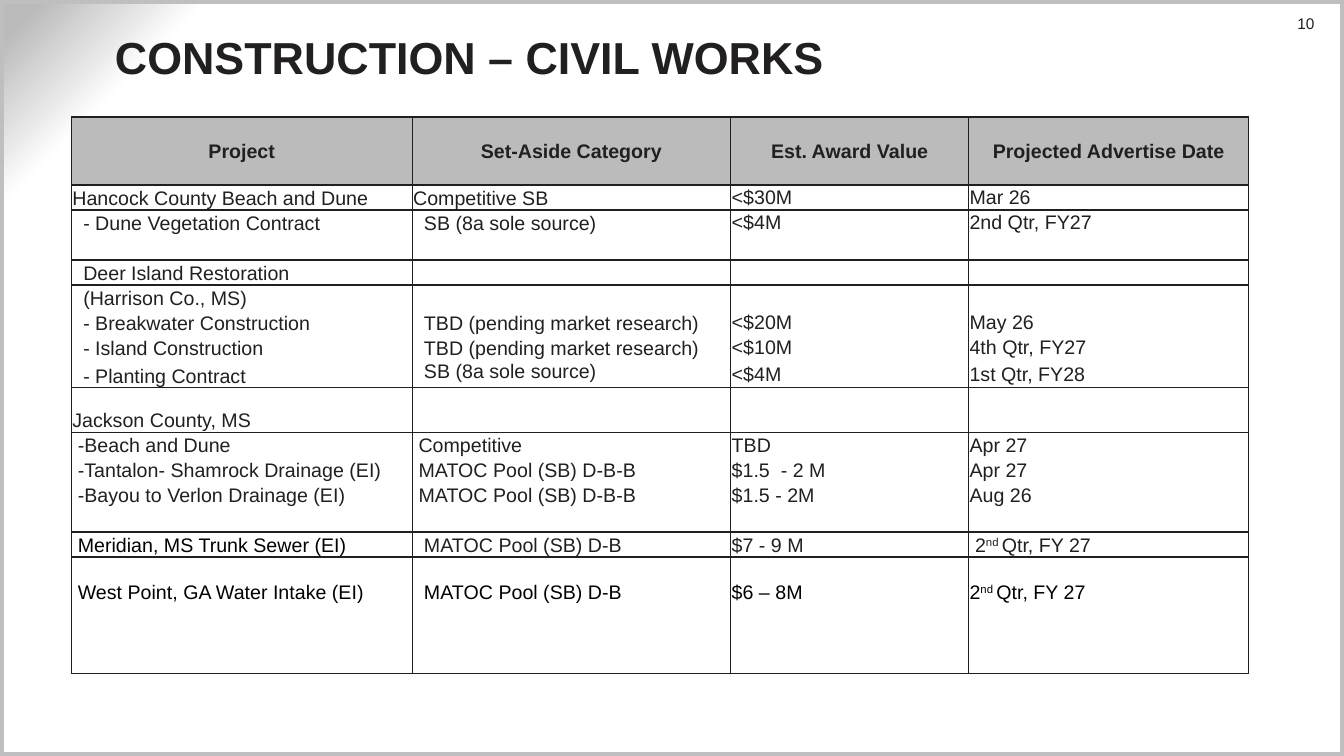
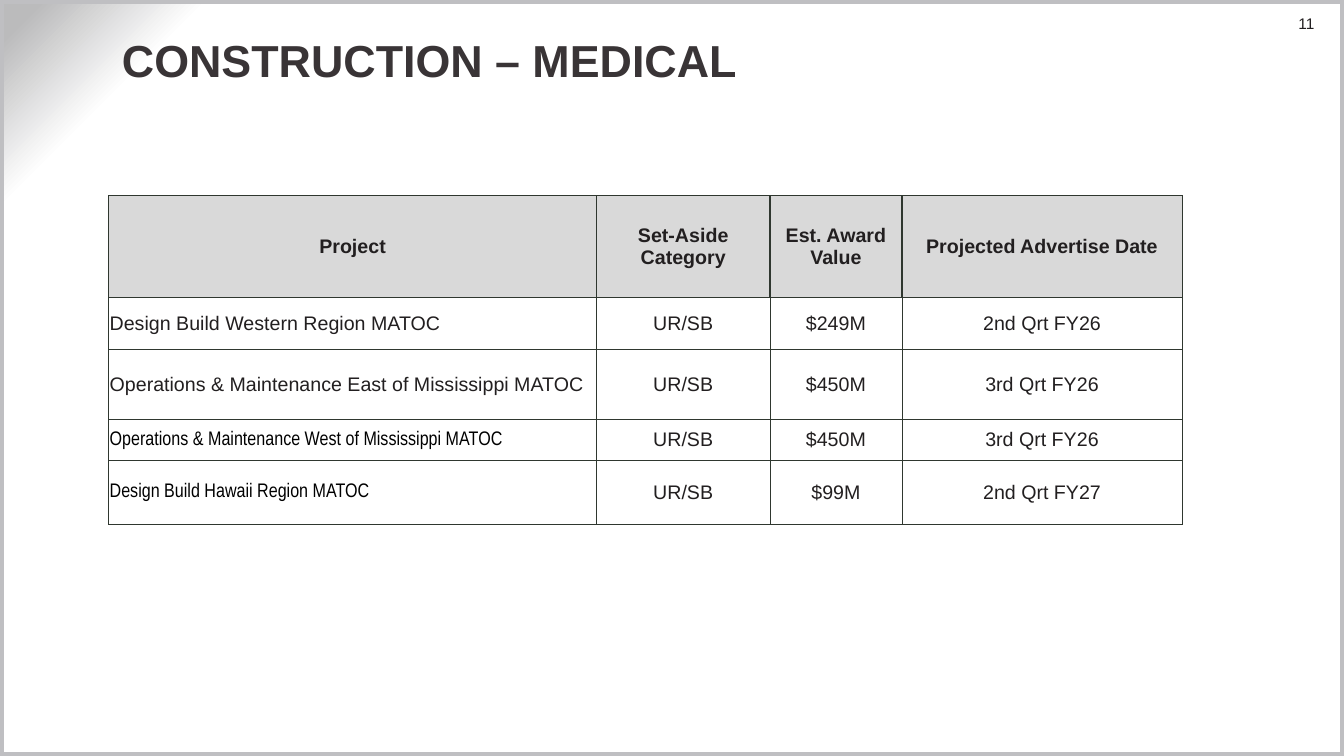
"""Build two construction forecast slides with tables of planned contracts."""
from dataclasses import dataclass, field

from lxml import etree
from pptx import Presentation
from pptx.dml.color import RGBColor
from pptx.enum import shapes, text
from pptx.oxml import ns
from pptx.util import Pt


@dataclass(frozen=True)
class Theme:
    ink: str = "221F20"
    black: str = "000000"
    white: str = "FFFFFF"
    frame: str = "BFBFC2"
    corner: str = "BBBBBC"
    font: str = "Arial"
    narrow_font: str = "Arial Narrow"
    title_size: float = 32
    table_size: float = 14
    number_size: float = 11
    width: float = 960
    height: float = 540
    frame_width: float = 6
    cell_inset: float = 0.72
    indent_step: float = 3.89
    row_height: float = 17.85


THEME = Theme()
NO_STYLE = "{2D5ABB26-0587-4C30-8999-92F81FD0307C}"
HEADINGS = ("Project", "Set-Aside Category", "Est. Award Value", "Projected Advertise Date")
ANCHORS = {
    "t": text.MSO_ANCHOR.TOP,
    "m": text.MSO_ANCHOR.MIDDLE,
    "b": text.MSO_ANCHOR.BOTTOM,
}


@dataclass(frozen=True)
class Row:
    texts: tuple[str, ...] = ("", "", "", "")
    height: float = THEME.row_height
    indents: tuple[int, ...] = (0, 0, 0, 0)
    anchors: str = "bbbb"
    black_columns: tuple[int, ...] = ()
    first_font: str = THEME.font
    centered: tuple[int, ...] = ()
    bold: bool = False


@dataclass(frozen=True)
class Forecast:
    number: str
    title: str
    title_left: float
    title_top: float
    title_color: str
    left: float
    top: float
    columns: tuple[float, ...]
    header_height: float
    header_fill: str
    line_color: str
    body_line: float
    groups: tuple[tuple[Row, ...], ...] = field(default_factory=tuple)


def medical_row(texts: tuple[str, ...], height: float, narrow: bool = False) -> Row:
    """Return a row with centred values after the project name."""
    return Row(texts, height, anchors="mmmm", centered=(1, 2, 3),
               black_columns=(0,) if narrow else (),
               first_font=THEME.narrow_font if narrow else THEME.font)


CIVIL_GROUPS = (
    (
        Row(("Hancock County Beach and Dune", "Competitive SB", "<$30M", "Mar 26"),
            anchors="bbmm"),
        Row(("- Dune Vegetation Contract", "SB (8a sole source)", "<$4M", "2nd Qtr, FY27"),
            indents=(2, 2, 0, 0), anchors="bbmm"),
        Row(),
    ),
    (
        Row(("Deer Island Restoration", "", "", ""), indents=(2, 0, 0, 0)),
        Row(("(Harrison Co., MS)", "", "", ""), indents=(2, 0, 0, 0)),
        Row(("- Breakwater Construction", "TBD (pending market research)", "<$20M", "May 26"),
            indents=(2, 2, 0, 0), anchors="bbmm"),
        Row(("- Island Construction", "TBD (pending market research)", "<$10M",
             "4th Qtr, FY27"), indents=(2, 2, 0, 0), anchors="bbmm"),
        Row(("- Planting Contract", "SB (8a sole source)", "<$4M", "1st Qtr, FY28"),
            20, (2, 2, 0, 0), "btmm"),
    ),
    (
        Row(("Jackson County, MS", "", "", ""), 31.7),
        Row(("-Beach and Dune", "Competitive", "TBD", "Apr 27"), indents=(1, 1, 0, 0)),
        Row(("-Tantalon- Shamrock Drainage (EI)", "MATOC Pool (SB) D-B-B", "$1.5  - 2 M",
             "Apr 27"), indents=(1, 1, 0, 0)),
        Row(("-Bayou to Verlon Drainage (EI)", "MATOC Pool (SB) D-B-B", "$1.5 - 2M",
             "Aug 26"), indents=(1, 1, 0, 0)),
        Row(),
    ),
    (
        Row(("Meridian, MS Trunk Sewer (EI)", "MATOC Pool (SB) D-B", "$7 - 9 M",
             "2^nd ^Qtr, FY 27"), indents=(1, 2, 0, 1), black_columns=(0,)),
        Row(("West Point, GA Water Intake (EI)", "MATOC Pool (SB) D-B", "$6 – 8M",
             "2^nd ^Qtr, FY 27"), 33.6, (1, 2, 0, 0), black_columns=(0, 1, 2, 3)),
        Row(height=31.7),
        Row(),
    ),
)

MEDICAL_GROUPS = tuple((row,) for row in (
    medical_row(("Design Build Western Region MATOC", "UR/SB", "$249M", "2nd Qrt FY26"), 37.5),
    medical_row(("Operations & Maintenance East of Mississippi MATOC", "UR/SB", "$450M",
                 "3rd Qrt FY26"), 49.5),
    medical_row(("Operations & Maintenance West of Mississippi MATOC", "UR/SB", "$450M",
                 "3rd Qrt FY26"), 29.5, narrow=True),
    medical_row(("Design Build Hawaii Region MATOC", "UR/SB", "$99M", "2nd Qrt FY27"),
                45.5, narrow=True),
))

FORECASTS = (
    Forecast("10", "CONSTRUCTION – CIVIL WORKS", 75, 18, THEME.ink, 51, 83.5,
             (243.4, 227.6, 169.9, 200.2), 48.7, THEME.corner, THEME.ink, 1, CIVIL_GROUPS),
    Forecast("11", "CONSTRUCTION – MEDICAL", 80, 20, "393436", 77.6, 139.8,
             (348.5, 123.9, 94.3, 200.2), 72.5, "D9D9D9", "2F372F", 0.5, MEDICAL_GROUPS),
)


def style_span(span, size: float, color: str, bold: bool = False,
               font: str = THEME.font) -> None:
    """Set the type of one run."""
    span.font.name = font
    span.font.size = Pt(size)
    span.font.bold = bold
    span.font.color.rgb = RGBColor.from_string(color)


def set_background(master) -> None:
    """Give every slide a white ground with a grey top-left corner."""
    master.background.fill.gradient()
    gradient = master.element.find(".//" + ns.qn("a:gradFill"))
    for child in list(gradient):
        gradient.remove(child)
    stops = etree.SubElement(gradient, ns.qn("a:gsLst"))
    for position, color in ((87, THEME.white), (90, THEME.white), (98, THEME.corner)):
        stop = etree.SubElement(stops, ns.qn("a:gs"), pos=str(position * 1000))
        etree.SubElement(stop, ns.qn("a:srgbClr"), val=color)
    circle = etree.SubElement(gradient, ns.qn("a:path"))
    circle.set("path", "circle")
    etree.SubElement(circle, ns.qn("a:fillToRect"), l="100000", t="100000")


def add_frame(page) -> None:
    """Draw the grey frame around the slide."""
    frame = page.shapes.add_shape(shapes.MSO_SHAPE.RECTANGLE, 0, 0,
                                  Pt(THEME.width), Pt(THEME.height))
    frame.shadow.inherit = False
    frame.fill.background()
    frame.line.color.rgb = RGBColor.from_string(THEME.frame)
    frame.line.width = Pt(THEME.frame_width)


def add_label(page, words: str, left: float, top: float, width: float, height: float):
    """Add a wrapping text box and return it."""
    box = page.shapes.add_textbox(Pt(left), Pt(top), Pt(width), Pt(height))
    box.text_frame.word_wrap = True
    box.text_frame.text = words
    return box


def add_number(page, number: str) -> None:
    """Write the page number in the top right corner."""
    frame = add_label(page, number, 895.7, 10, 43.2, 13.7).text_frame
    frame.margin_top = frame.margin_right = frame.margin_bottom = 0
    para = frame.paragraphs[0]
    para.alignment = text.PP_ALIGN.RIGHT
    style_span(para.runs[0], THEME.number_size, THEME.ink)


def add_title(page, forecast: Forecast) -> None:
    """Write the slide title."""
    box = add_label(page, forecast.title, forecast.title_left, forecast.title_top, 810, 50)
    style_span(box.text_frame.paragraphs[0].runs[0], THEME.title_size,
               forecast.title_color, True)


def add_border(cell, side: str, width: float, color: str) -> None:
    """Draw one side of a cell."""
    line = etree.SubElement(cell._tc.get_or_add_tcPr(), ns.qn(f"a:ln{side}"),
                            w=str(int(Pt(width))))
    fill = etree.SubElement(line, ns.qn("a:solidFill"))
    etree.SubElement(fill, ns.qn("a:srgbClr"), val=color)


def fill_cell(cell, row: Row, column: int) -> None:
    """Write and format one cell; carets enclose superscript."""
    cell.margin_left = Pt(THEME.cell_inset + THEME.indent_step * row.indents[column])
    cell.margin_right = cell.margin_top = Pt(THEME.cell_inset)
    cell.margin_bottom = 0
    cell.vertical_anchor = ANCHORS[row.anchors[column]]
    para = cell.text_frame.paragraphs[0]
    if column in row.centered:
        para.alignment = text.PP_ALIGN.CENTER
    if not row.texts[column]:
        etree.SubElement(para._p, ns.qn("a:endParaRPr"), sz=str(int(THEME.table_size * 100)))
        return
    first, *others = row.texts[column].split("^")
    para.text = first
    for piece in others:
        para.add_run().text = piece
    color = THEME.black if column in row.black_columns else THEME.ink
    font = row.first_font if column == 0 else THEME.font
    for index, span in enumerate(para.runs):
        style_span(span, THEME.table_size, color, row.bold, font)
        if index % 2:
            span._r.get_or_add_rPr().set("baseline", "30000")


def add_forecast_table(page, forecast: Forecast) -> None:
    """Draw the table, with horizontal rules only around each group of rows."""
    header = Row(HEADINGS, forecast.header_height, anchors="mmmm",
                 centered=(0, 1, 2, 3), bold=True)
    groups = ((header,), *forecast.groups)
    rows = [(row, index == 0, index == len(group) - 1)
            for group in groups for index, row in enumerate(group)]
    table = page.shapes.add_table(
        len(rows), len(forecast.columns), Pt(forecast.left), Pt(forecast.top),
        Pt(sum(forecast.columns)), Pt(sum(row.height for row, _, _ in rows))).table
    table.horz_banding = False
    table._tbl.find(".//" + ns.qn("a:tableStyleId")).text = NO_STYLE
    for column, width in zip(table.columns, forecast.columns):
        column.width = Pt(width)
    for number, (row, opens, closes) in enumerate(rows):
        table.rows[number].height = Pt(row.height)
        sides = "LR" + "T" * opens + "B" * closes
        for column in range(len(forecast.columns)):
            cell = table.cell(number, column)
            fill_cell(cell, row, column)
            for side in sides:
                add_border(cell, side, 1 if row is header else forecast.body_line,
                           forecast.line_color)
            if row is header:
                cell.fill.solid()
                cell.fill.fore_color.rgb = RGBColor.from_string(forecast.header_fill)
            else:
                cell.fill.background()


def main() -> None:
    """Build and save the deck."""
    deck = Presentation()
    deck.slide_width, deck.slide_height = Pt(THEME.width), Pt(THEME.height)
    set_background(deck.slide_master)
    for forecast in FORECASTS:
        page = deck.slides.add_slide(deck.slide_layouts[6])
        add_number(page, forecast.number)
        add_frame(page)
        add_title(page, forecast)
        add_forecast_table(page, forecast)
    deck.save("out.pptx")


if __name__ == "__main__":
    main()
